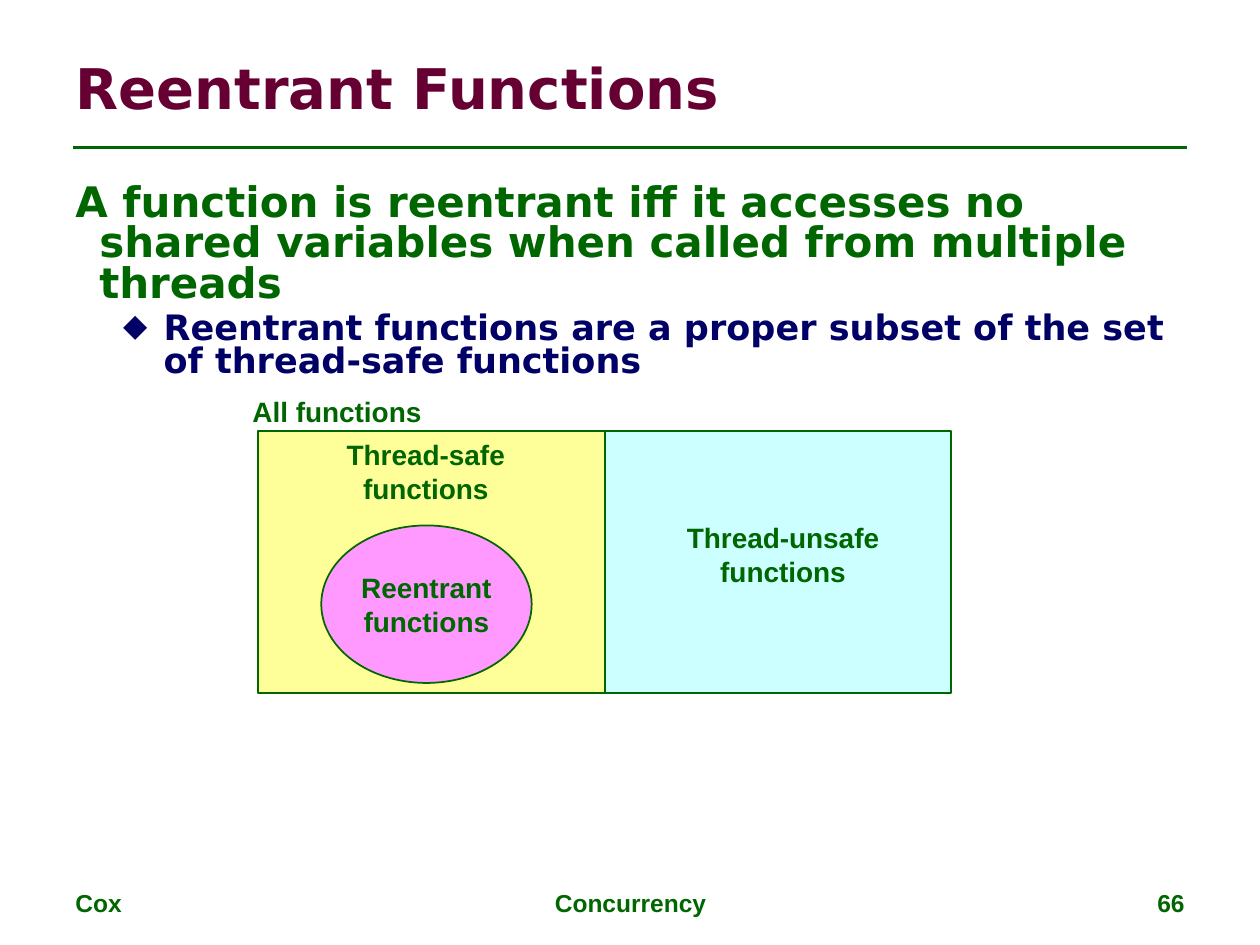
from dataclasses import dataclass

from lxml import etree
from pptx import Presentation
from pptx.dml.color import RGBColor
from pptx.enum.shapes import MSO_CONNECTOR, MSO_SHAPE
from pptx.enum.text import MSO_ANCHOR, PP_ALIGN
from pptx.oxml.ns import qn
from pptx.util import Inches, Pt

LEFT, CENTER, RIGHT = PP_ALIGN.LEFT, PP_ALIGN.CENTER, PP_ALIGN.RIGHT
TOP, MIDDLE = MSO_ANCHOR.TOP, MSO_ANCHOR.MIDDLE
RECTANGLE, OVAL = MSO_SHAPE.RECTANGLE, MSO_SHAPE.OVAL
STRAIGHT = MSO_CONNECTOR.STRAIGHT
GREEN, MAROON, NAVY = "006600", "660033", "000066"
YELLOW, PINK, CYAN = "FFFF99", "FF99FF", "CCFFFF"
HEADING_FONT, LABEL_FONT = "DejaVu Sans", "Arial"
SET_LEFT, SET_TOP, SET_WIDTH, SET_HEIGHT = 2.05, 3.42, 2.75, 2.08


@dataclass(frozen=True)
class Box:
    left: float
    top: float
    width: float
    height: float

    def lengths(self) -> list:
        return [Inches(value) for value in (self.left, self.top, self.width, self.height)]


@dataclass(frozen=True)
class Line:
    text: str
    size: int = 16
    color: str = GREEN
    font: str = LABEL_FONT
    align: PP_ALIGN = CENTER
    level: int = 0
    margin: float = 0
    indent: float = 0
    spacing: float = 1.0
    before: float = 0
    bullet: str = ""


@dataclass(frozen=True)
class TextBlock:
    box: Box
    lines: tuple
    anchor: MSO_ANCHOR = MIDDLE
    wrap: bool = False


@dataclass(frozen=True)
class Region:
    kind: MSO_SHAPE
    box: Box
    fill: str
    lines: tuple = ()


def set_color(target, color: str) -> None:
    target.rgb = RGBColor.from_string(color)


def apply_format(target, values: dict) -> None:
    for name, value in values.items():
        setattr(target, name, value)


def indent_paragraph(paragraph, line: Line) -> None:
    properties = paragraph._p.get_or_add_pPr()
    properties.set("marL", str(Inches(line.margin)))
    properties.set("indent", str(Inches(line.indent)))
    if line.bullet:
        etree.SubElement(properties, qn("a:buSzPct"), val="90000")
        etree.SubElement(properties, qn("a:buFont"), typeface=line.font)
        etree.SubElement(properties, qn("a:buChar"), char=line.bullet)


def write_lines(frame, lines: tuple, anchor: MSO_ANCHOR, wrap: bool) -> None:
    apply_format(frame, {"vertical_anchor": anchor, "word_wrap": wrap})
    for index, line in enumerate(lines):
        paragraph = frame.add_paragraph() if index else frame.paragraphs[0]
        apply_format(paragraph, {
            "alignment": line.align,
            "level": line.level,
            "line_spacing": line.spacing,
            "space_before": Pt(line.before),
        })
        indent_paragraph(paragraph, line)
        run = paragraph.add_run()
        run.text = line.text
        apply_format(run.font, {"size": Pt(line.size), "name": line.font, "bold": True})
        set_color(run.font.color, line.color)


def add_text(slide, block: TextBlock) -> None:
    shape = slide.shapes.add_textbox(*block.box.lengths())
    write_lines(shape.text_frame, block.lines, block.anchor, block.wrap)


def add_region(slide, region: Region) -> None:
    shape = slide.shapes.add_shape(region.kind, *region.box.lengths())
    shape.shadow.inherit = False
    shape.fill.solid()
    set_color(shape.fill.fore_color, region.fill)
    set_color(shape.line.color, GREEN)
    shape.line.width = Pt(1)
    if region.lines:
        write_lines(shape.text_frame, region.lines, MIDDLE, False)


def add_rule(slide, left: float, right: float, top: float) -> None:
    connector = slide.shapes.add_connector(
        STRAIGHT, Inches(left), Inches(top), Inches(right), Inches(top))
    set_color(connector.line.color, GREEN)
    connector.line.width = Pt(1.5)
    etree.SubElement(connector._element.spPr, qn("a:effectLst"))


def function_label(kind: str) -> tuple:
    return Line(kind), Line("functions")


def footer(text: str, left: float, width: float, align: PP_ALIGN) -> TextBlock:
    return TextBlock(Box(left, 7, width, 0.35), (Line(text, 14, align=align),), TOP, True)


TITLE = Line("Reentrant Functions", 32, MAROON, HEADING_FONT, LEFT)
DEFINITION = Line(
    "A function is reentrant iff it accesses no shared variables when called from multiple threads",
    24, GREEN, HEADING_FONT, LEFT, margin=0.19, indent=-0.19, spacing=0.8, before=4.8)
SUBSET_NOTE = Line(
    "Reentrant functions are a proper subset of the set of thread-safe functions",
    20, NAVY, HEADING_FONT, LEFT, level=1, margin=0.7, indent=-0.32,
    spacing=0.8, before=4, bullet="◆")

REGIONS = (
    Region(RECTANGLE, Box(SET_LEFT, SET_TOP, SET_WIDTH, SET_HEIGHT), YELLOW),
    Region(RECTANGLE, Box(SET_LEFT + SET_WIDTH, SET_TOP, SET_WIDTH, SET_HEIGHT), CYAN),
    Region(OVAL, Box(2.55, 4.17, 1.67, 1.25), PINK, function_label("Reentrant")),
)

TEXT_BLOCKS = (
    TextBlock(Box(0.5, 0.3, 9, 0.78), (TITLE,), wrap=True),
    TextBlock(Box(0.5, 1.42, 9, 5.28), (DEFINITION, SUBSET_NOTE), TOP, True),
    TextBlock(Box(1.9, 3.08, 1.55, 0.37), (Line("All functions"),)),
    TextBlock(Box(2.65, SET_TOP, 1.46, 0.64), function_label("Thread-safe")),
    TextBlock(Box(5.35, 4.08, 1.73, 0.64), function_label("Thread-unsafe")),
    footer("Cox", 0.5, 2.33, LEFT),
    footer("Concurrency", 3.42, 3.17, CENTER),
    footer("66", 7.17, 2.33, RIGHT),
)


def main() -> None:
    presentation = Presentation()
    apply_format(presentation, {"slide_width": Inches(10), "slide_height": Inches(7.5)})
    slide = presentation.slides.add_slide(presentation.slide_layouts[6])
    add_rule(slide, 0.58, 9.42, 1.17)
    for region in REGIONS:
        add_region(slide, region)
    for block in TEXT_BLOCKS:
        add_text(slide, block)
    presentation.save("out.pptx")


if __name__ == "__main__":
    main()
